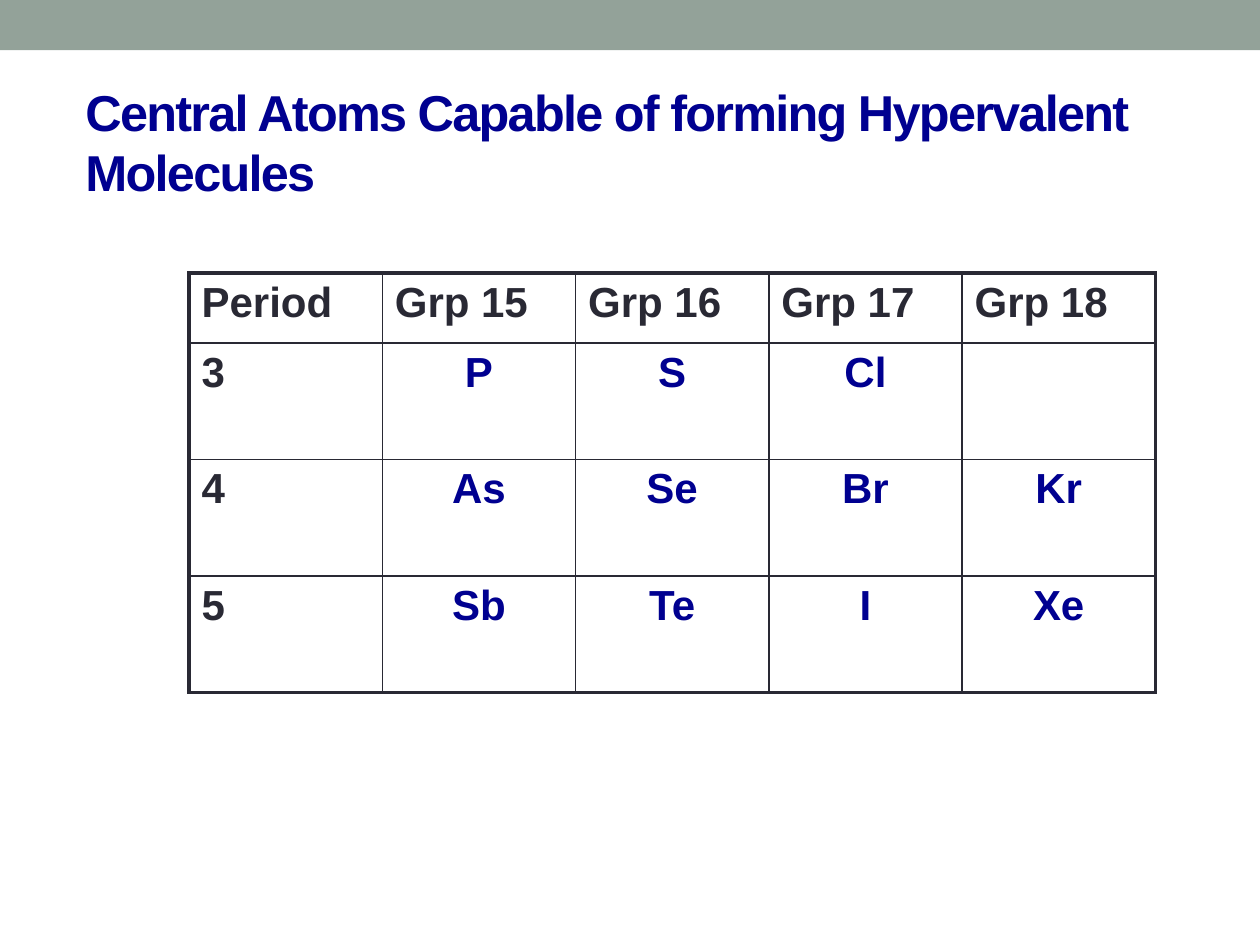
from lxml.etree import SubElement
from pptx import Presentation
from pptx.dml.color import RGBColor
from pptx.enum.shapes import MSO_SHAPE
from pptx.enum.text import MSO_ANCHOR, PP_ALIGN
from pptx.oxml.ns import qn
from pptx.util import Inches, Pt

WIDTH, HEIGHT = Inches(10), Inches(7.5)
FONT = "Arial"
SAGE, NAVY, INK, WHITE = "93A299", "000090", "292934", "FFFFFF"
THIN, THICK = 1, 2.25
TITLE = "Central Atoms Capable of forming Hypervalent Molecules"
ATOMS = [
    ["Period", "Grp 15", "Grp 16", "Grp 17", "Grp 18"],
    ["3", "P", "S", "Cl", ""],
    ["4", "As", "Se", "Br", "Kr"],
    ["5", "Sb", "Te", "I", "Xe"],
]


def color(value):
    return RGBColor.from_string(value)


def share(left, top, width, height):
    return [round(part * side) for part, side in
            zip((left, top, width, height), (WIDTH, HEIGHT) * 2)]


def style_text(para, size, tint):
    for span in para.runs:
        span.font.name = FONT
        span.font.size = Pt(size)
        span.font.bold = True
        span.font.color.rgb = color(tint)


def add_band(page, box):
    band = page.shapes.add_shape(MSO_SHAPE.RECTANGLE, *box)
    band.shadow.inherit = False
    band.fill.solid()
    band.fill.fore_color.rgb = color(SAGE)
    band.line.fill.background()


def add_title(page, box):
    frame = page.shapes.add_textbox(*box).text_frame
    frame.word_wrap = True
    frame.vertical_anchor = MSO_ANCHOR.MIDDLE
    frame.text = TITLE
    para = frame.paragraphs[0]
    style_text(para, 28.8, NAVY)
    for span in para.runs:
        span.font._element.set("spc", "-100")


def set_borders(cell, weights):
    properties = cell._tc.get_or_add_tcPr()
    for side, weight in weights.items():
        line = SubElement(properties, qn(f"a:ln{side}"), w=str(Pt(weight)))
        fill = SubElement(line, qn("a:solidFill"))
        SubElement(fill, qn("a:srgbClr"), val=INK)


def add_atom_table(page, box):
    row_count, column_count = len(ATOMS), len(ATOMS[0])
    table = page.shapes.add_table(row_count, column_count, *box).table
    table.horz_banding = False
    table.first_row = False
    width, height = box[2:]
    header_height = height // 6
    for column in table.columns:
        column.width = width // column_count
    for index, row in enumerate(table.rows):
        row.height = (height - header_height) // (row_count - 1) if index else header_height
    for r, entries in enumerate(ATOMS):
        for c, entry in enumerate(entries):
            cell = table.cell(r, c)
            outer = {"L": c == 0, "R": c == column_count - 1,
                     "T": r == 0, "B": r == row_count - 1}
            set_borders(cell, {side: THICK if edge else THIN
                               for side, edge in outer.items()})
            cell.fill.solid()
            cell.fill.fore_color.rgb = color(WHITE)
            cell.text = entry
            para = cell.text_frame.paragraphs[0]
            para.font.size = Pt(24)
            is_label = r == 0 or c == 0
            para.alignment = PP_ALIGN.LEFT if is_label else PP_ALIGN.CENTER
            style_text(para, 24, INK if is_label else NAVY)


def main():
    deck = Presentation()
    deck.slide_width, deck.slide_height = WIDTH, HEIGHT
    page = deck.slides.add_slide(deck.slide_layouts[6])
    add_band(page, share(0, 0, 1, 0.053))
    add_title(page, share(0.058, 0.1, 0.887, 0.099))
    add_atom_table(page, share(0.15, 0.289, 0.767, 0.444))
    deck.save("out.pptx")


if __name__ == "__main__":
    main()
